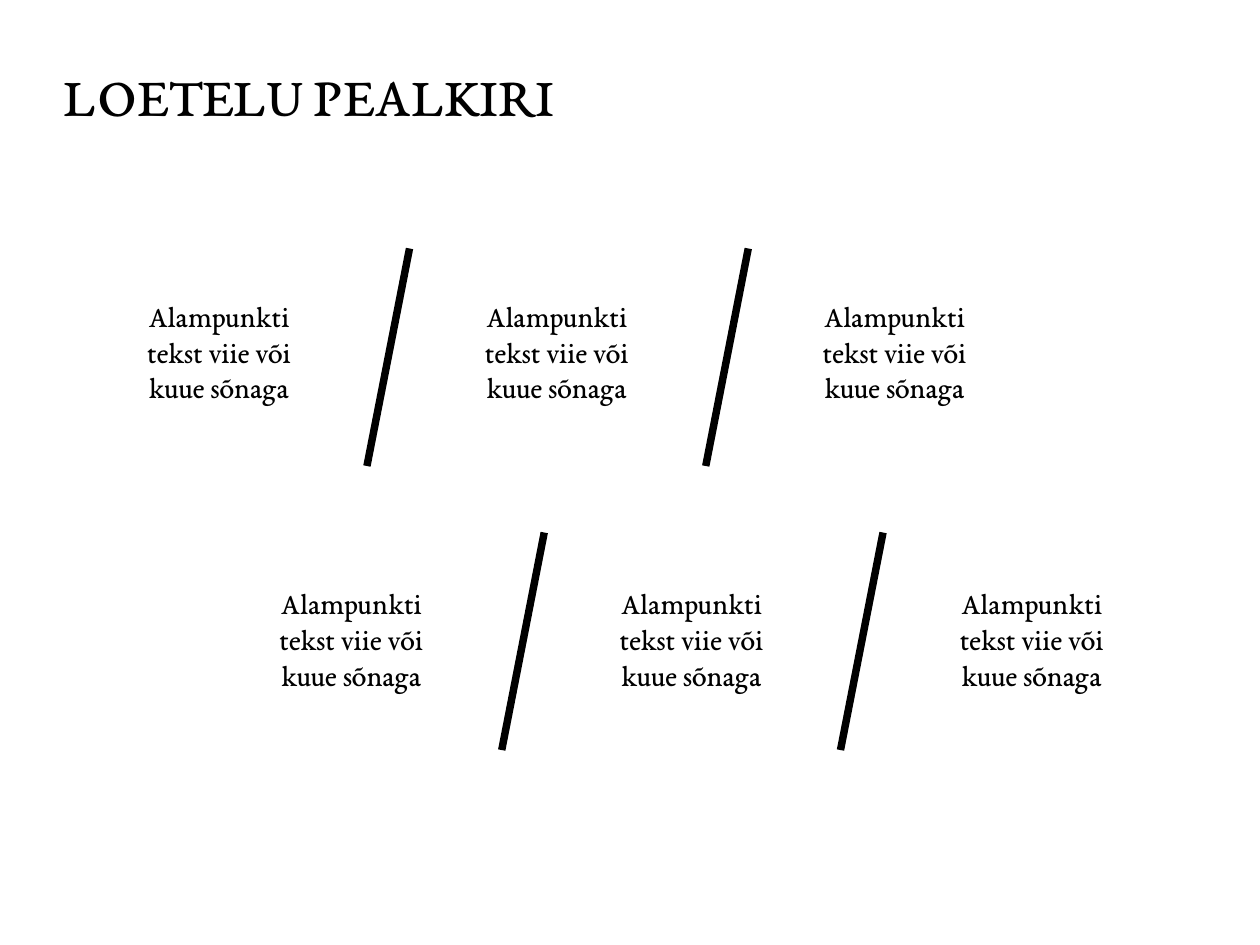
from lxml.etree import SubElement
from pptx import Presentation
from pptx.dml.color import RGBColor
from pptx.enum.shapes import MSO_CONNECTOR
from pptx.enum.text import MSO_ANCHOR, MSO_AUTO_SIZE, PP_ALIGN
from pptx.oxml.ns import qn
from pptx.util import Pt

BLACK = RGBColor(0, 0, 0)
FONT = "EB Garamond"
SUBPOINT = "Alampunkti\ntekst viie või\nkuue sõnaga"

presentation = Presentation()
presentation.slide_width, presentation.slide_height = Pt(720), Pt(540)
slide = presentation.slides.add_slide(presentation.slide_layouts[6])


def add_text(text, left, top, width, height, *, size, align, anchor,
             auto_size=MSO_AUTO_SIZE.NONE):
    box = slide.shapes.add_textbox(Pt(left), Pt(top), Pt(width), Pt(height))
    frame = box.text_frame
    frame.text = text
    frame.word_wrap = True
    frame.auto_size = auto_size
    frame.vertical_anchor = anchor
    for paragraph in frame.paragraphs:
        paragraph.alignment = align
        paragraph.font.name = FONT
        paragraph.font.size = Pt(size)
        paragraph.font.color.rgb = BLACK


def add_slash(right, top):
    slash = slide.shapes.add_connector(
        MSO_CONNECTOR.STRAIGHT,
        Pt(right), Pt(top), Pt(right - 24.3), Pt(top + 124.3))
    slash.line.color.rgb = BLACK
    slash.line.width = Pt(4.25)
    SubElement(slash._element.spPr, qn("a:effectLst"))


add_text("LOETELU PEALKIRI", 29.5, -13, 659, 89.3,
         size=32, align=PP_ALIGN.LEFT, anchor=MSO_ANCHOR.BOTTOM)

# Each row: text left, text step, text top, slash right, slash top
SLASH_STEP = 193.6
ROWS = [
    (66.2, 193, 166.3, 234, 142),
    (141.8, 194.4, 330.5, 311, 304.3),
]
for text_left, text_step, text_top, slash_right, slash_top in ROWS:
    for column in range(3):
        add_text(SUBPOINT, text_left + column * text_step, text_top, 118, 69,
                 size=17, align=PP_ALIGN.CENTER, anchor=MSO_ANCHOR.MIDDLE,
                 auto_size=MSO_AUTO_SIZE.SHAPE_TO_FIT_TEXT)
    for gap in range(2):
        add_slash(slash_right + gap * SLASH_STEP, slash_top)

presentation.save("out.pptx")
